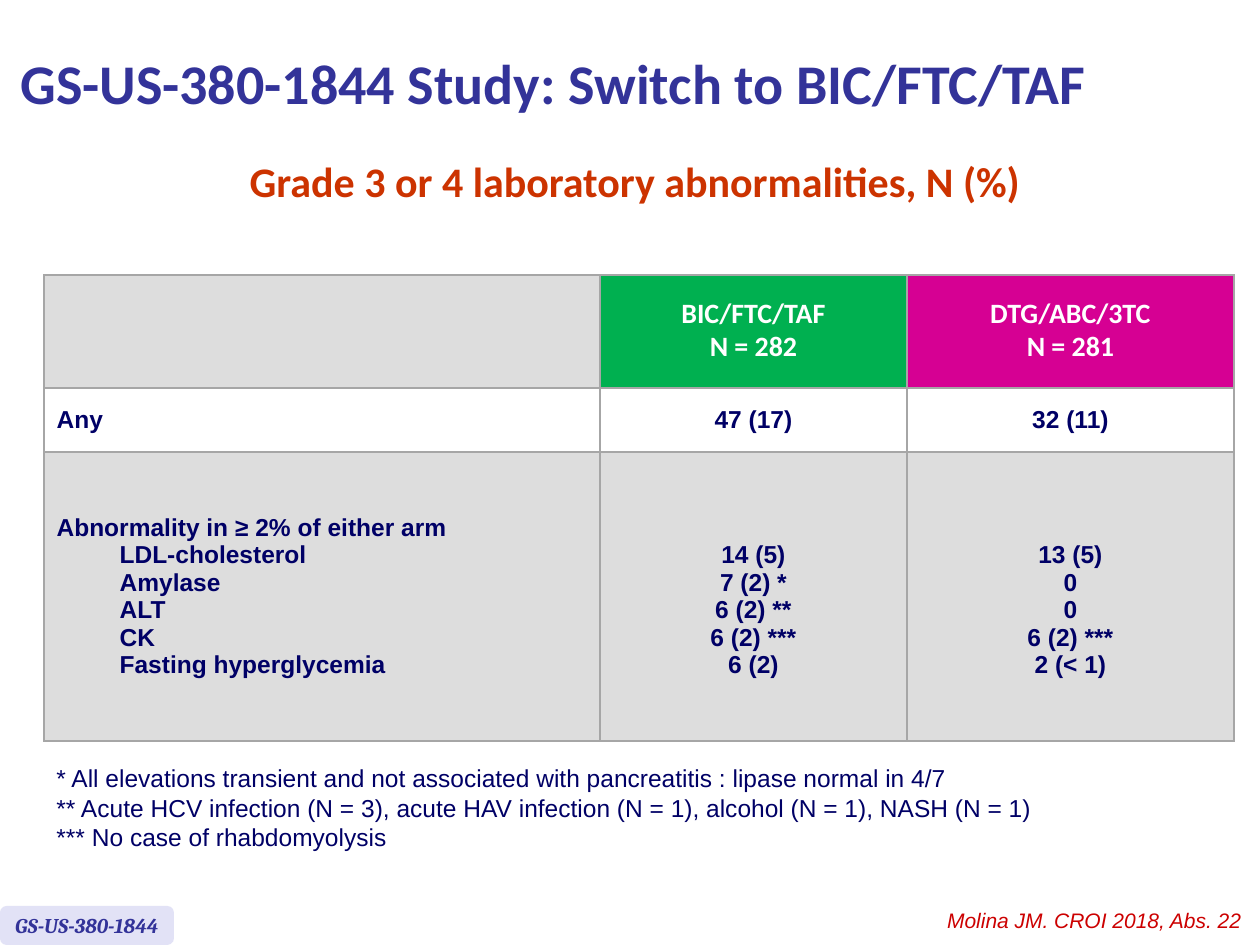
from dataclasses import dataclass

from lxml.etree import SubElement
from pptx import Presentation
from pptx.dml.color import RGBColor
from pptx.enum.shapes import MSO_SHAPE as Shape
from pptx.enum.text import MSO_ANCHOR as Anchor, PP_ALIGN as Align
from pptx.oxml.ns import qn
from pptx.util import Emu, Pt

EMU_PER_PX = 914400 / 126


def px(length):
    return Emu(round(length * EMU_PER_PX))


def rgb(code):
    return RGBColor.from_string(code)


@dataclass(frozen=True)
class TextStyle:
    font: str
    size: int
    color: str
    bold: bool = False
    italic: bool = False


@dataclass(frozen=True)
class Theme:
    title = TextStyle("Calibri", 32, "333399", bold=True)
    subtitle = TextStyle("Calibri", 24, "CC3300", bold=True)
    header = TextStyle("Calibri", 16, "FFFFFF", bold=True)
    body = TextStyle("Arial", 14, "000066", bold=True)
    note = TextStyle("Arial", 14, "000066")
    source = TextStyle("Arial", 12, "CC0000", italic=True)
    tag = TextStyle("Cambria", 12, "333399", bold=True, italic=True)
    tag_fill = "E2E2F6"
    border = "A6A6A6"
    white = "FFFFFF"
    grey = "DDDDDD"
    arm_one = "00B050"
    arm_two = "D60093"


class SlideBuilder:
    """Draws styled elements on one slide."""

    def __init__(self, slide, theme):
        self.slide = slide
        self.theme = theme

    def fill_text(self, frame, lines, style, align=Align.LEFT, line_spacing=None, gap=0):
        frame.text = "\n".join(lines)
        for index, para in enumerate(frame.paragraphs):
            para.alignment = align
            para.line_spacing = line_spacing
            if index and gap:
                para.space_before = Pt(gap)
            for span in para.runs:
                span.font.name = style.font
                span.font.size = Pt(style.size)
                span.font.bold = style.bold
                span.font.italic = style.italic
                span.font.color.rgb = rgb(style.color)

    def text(self, place, lines, style, align=Align.LEFT, anchor=Anchor.TOP,
             wrap=True, line_spacing=None):
        box = self.slide.shapes.add_textbox(*map(px, place))
        box.text_frame.word_wrap = wrap
        box.text_frame.vertical_anchor = anchor
        self.fill_text(box.text_frame, lines, style, align, line_spacing)

    def tag(self, place, label):
        box = self.slide.shapes.add_shape(Shape.ROUNDED_RECTANGLE, *map(px, place))
        box.shadow.inherit = False
        box.fill.solid()
        box.fill.fore_color.rgb = rgb(self.theme.tag_fill)
        box.line.fill.background()
        box.text_frame.word_wrap = False
        box.text_frame.vertical_anchor = Anchor.MIDDLE
        self.fill_text(box.text_frame, [label], self.theme.tag, Align.CENTER)

    def table(self, left, top, widths, heights):
        place = (left, top, sum(widths), sum(heights))
        table = self.slide.shapes.add_table(
            len(heights), len(widths), *map(px, place)).table
        table.first_row = table.horz_banding = False
        for column, width in zip(table.columns, widths):
            column.width = px(width)
        for row, height in zip(table.rows, heights):
            row.height = px(height)
        return table

    def cell(self, cell, lines, fill, style, align, **spacing):
        properties = cell._tc.get_or_add_tcPr()
        for side in ("a:lnL", "a:lnR", "a:lnT", "a:lnB"):
            line = SubElement(properties, qn(side), w=str(Pt(1)))
            solid = SubElement(line, qn("a:solidFill"))
            SubElement(solid, qn("a:srgbClr"), val=self.theme.border)
        cell.fill.solid()
        cell.fill.fore_color.rgb = rgb(fill)
        cell.vertical_anchor = Anchor.MIDDLE
        self.fill_text(cell.text_frame, lines, style, align, **spacing)

    def indent(self, paragraphs, length):
        for para in paragraphs:
            para.level = 1
            properties = para._p.get_or_add_pPr()
            properties.set("marL", str(px(length)))
            properties.set("indent", "0")


def add_results(builder):
    theme = builder.theme
    table = builder.table(44, 275, (556, 307, 327), (113, 64, 289))
    headers = (
        ([], theme.grey),
        (["BIC/FTC/TAF", "N = 282"], theme.arm_one),
        (["DTG/ABC/3TC", "N = 281"], theme.arm_two),
    )
    for column, (lines, fill) in enumerate(headers):
        builder.cell(table.cell(0, column), lines, fill, theme.header,
                     Align.CENTER, line_spacing=0.8, gap=3.2)

    rows = (
        (theme.white, (["Any"], ["47 (17)"], ["32 (11)"])),
        (theme.grey, (
            ["Abnormality in ≥ 2% of either arm", "LDL-cholesterol", "Amylase",
             "ALT", "CK", "Fasting hyperglycemia"],
            ["14 (5)", "7 (2) *", "6 (2) **", "6 (2) ***", "6 (2)"],
            ["13 (5)", "0", "0", "6 (2) ***", "2 (< 1)"],
        )),
    )
    for row, (fill, columns) in enumerate(rows, start=1):
        for column, lines in enumerate(columns):
            align = Align.CENTER if column else Align.LEFT
            builder.cell(table.cell(row, column), lines, fill, theme.body, align)

    builder.indent(table.cell(2, 0).text_frame.paragraphs[1:], 63)
    for column in (1, 2):
        table.cell(2, column).margin_top = px(34)


def main():
    deck = Presentation()
    deck.slide_width, deck.slide_height = px(1260), px(945)
    page = deck.slides.add_slide(deck.slide_layouts[6])
    theme = Theme()
    builder = SlideBuilder(page, theme)

    add_results(builder)
    builder.text((19, 173, 1232, 44), ["Grade 3 or 4 laboratory abnormalities, N (%)"],
                 theme.subtitle, Align.CENTER, line_spacing=Pt(15.2))
    builder.text((44, 757, 1002, 102), [
        "* All elevations transient and not associated with pancreatitis : lipase normal in 4/7",
        "** Acute HCV infection (N = 3), acute HAV infection (N = 1), alcohol (N = 1), NASH (N = 1)",
        "*** No case of rhabdomyolysis",
    ], theme.note, wrap=False)
    builder.text((813, 901, 441, 38), ["Molina JM. CROI 2018, Abs. 22"],
                 theme.source, Align.RIGHT)
    builder.tag((0, 906, 174, 39), "GS-US-380-1844")
    builder.text((8, 6, 1129, 152), ["GS-US-380-1844 Study: Switch to BIC/FTC/TAF"],
                 theme.title, anchor=Anchor.MIDDLE)
    deck.save("out.pptx")


if __name__ == "__main__":
    main()
